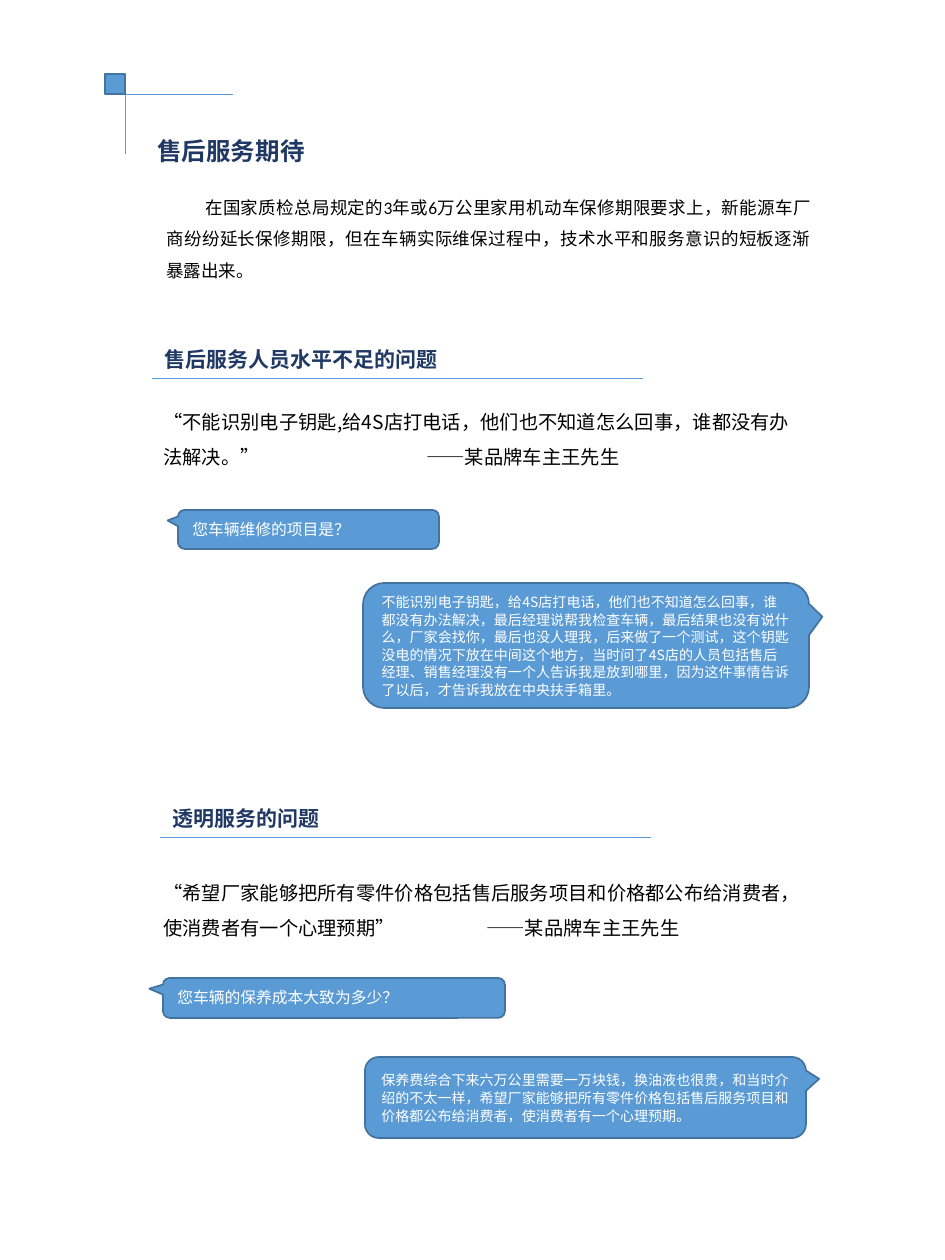
from lxml import etree
from pptx import Presentation
from pptx.dml.color import RGBColor
from pptx.enum.lang import MSO_LANGUAGE_ID
from pptx.enum.shapes import MSO_CONNECTOR, MSO_SHAPE
from pptx.enum.text import MSO_ANCHOR, MSO_AUTO_SIZE, PP_ALIGN
from pptx.oxml.ns import qn
from pptx.util import Pt

EMU_PER_PX = 914400 / 126
PAGE_WIDTH, PAGE_HEIGHT = 945, 1260

BLUE = RGBColor(0x5B, 0x9B, 0xD5)
OUTLINE = RGBColor(0x43, 0x73, 0x9E)
NAVY = RGBColor(0x20, 0x38, 0x64)
BLACK = RGBColor(0, 0, 0)
WHITE = RGBColor(0xFF, 0xFF, 0xFF)

CJK_FONT = "Noto Sans CJK SC"
BODY_FONT = "Calibri"

LEFT, JUSTIFY = PP_ALIGN.LEFT, PP_ALIGN.JUSTIFY
MIDDLE = MSO_ANCHOR.MIDDLE
GROW = MSO_AUTO_SIZE.SHAPE_TO_FIT_TEXT
STRAIGHT = MSO_CONNECTOR.STRAIGHT
RECTANGLE = MSO_SHAPE.RECTANGLE
CALLOUT = MSO_SHAPE.ROUNDED_RECTANGULAR_CALLOUT
CHINESE = MSO_LANGUAGE_ID.SIMPLIFIED_CHINESE

QUESTION_TAIL, ANSWER_TAIL = -0.54, 0.53
TAIL_HEIGHT, CORNER_ROUNDING = -0.23, 0.17


def px(*lengths):
    return [round(length * EMU_PER_PX) for length in lengths]


class Page:
    def __init__(self, slide):
        self.shapes = slide.shapes

    def line(self, x1, y1, x2, y2, shapes=None):
        rule = (shapes or self.shapes).add_connector(STRAIGHT, *px(x1, y1, x2, y2))
        rule.line.color.rgb = BLUE
        rule.line.width = Pt(0.5)
        etree.SubElement(rule._element.spPr, qn("a:effectLst"))

    def box(self, kind, area, shapes=None):
        shape = (shapes or self.shapes).add_shape(kind, *px(*area))
        shape.shadow.inherit = False
        shape.fill.solid()
        shape.fill.fore_color.rgb = BLUE
        shape.line.color.rgb = OUTLINE
        shape.line.width = Pt(1)
        return shape

    def corner_mark(self, x, y, size):
        shapes = self.shapes.add_group_shape().shapes
        self.line(x, y + size, x + 128, y + size, shapes)
        self.line(x + size, y, x + size, y + 80, shapes)
        self.box(RECTANGLE, (x, y, size, size), shapes)

    def set_text(self, frame, wording, size, color, spacing=None, bold=False,
                 face=CJK_FONT, align=LEFT):
        frame.word_wrap = True
        paragraph = frame.paragraphs[0]
        paragraph.text = wording
        paragraph.alignment = align
        paragraph.line_spacing = spacing
        font = paragraph.font
        font.name, font.size, font.bold = face, Pt(size), bold
        font.color.rgb = color
        font.language_id = CHINESE
        properties = paragraph._p.pPr
        etree.SubElement(properties.find(qn("a:defRPr")), qn("a:ea"), typeface=CJK_FONT)
        return properties

    def text(self, area, wording, size, color, **style):
        frame = self.shapes.add_textbox(*px(*area)).text_frame
        properties = self.set_text(frame, wording, size, color, **style)
        frame.auto_size = GROW
        return properties

    def body(self, area, wording, indent):
        properties = self.text(area, wording, 10, BLACK, spacing=1.5,
                               face=BODY_FONT, align=JUSTIFY)
        properties.set("marL", "0")
        properties.set("indent", str(px(indent)[0]))

    def section(self, x, y, heading):
        self.line(x, y + 38, x + 491, y + 38)
        self.text((x, y, 382, 38), heading, 12, NAVY, bold=True)

    def quote(self, area, wording, speaker, speaker_at):
        """Set the speaker at a tab stop after the quoted words."""
        properties = self.text(area, f"{wording}\t{speaker}", 11, BLACK, spacing=1.5)
        stops = etree.Element(qn("a:tabLst"))
        etree.SubElement(stops, qn("a:tab"), pos=str(px(speaker_at)[0]), algn="l")
        properties.find(qn("a:defRPr")).addprevious(stops)

    def callout(self, area, wording, size, tail):
        bubble = self.box(CALLOUT, area)
        for index, value in enumerate((tail, TAIL_HEIGHT, CORNER_ROUNDING)):
            bubble.adjustments[index] = value
        bubble.text_frame.vertical_anchor = MIDDLE
        self.set_text(bubble.text_frame, wording, size, WHITE, spacing=Pt(10))

    def question(self, area, wording):
        self.callout(area, wording, 9, QUESTION_TAIL)

    def answer(self, area, wording):
        self.callout(area, wording, 8, ANSWER_TAIL)


def main():
    deck = Presentation()
    deck.slide_width, deck.slide_height = px(PAGE_WIDTH, PAGE_HEIGHT)
    page = Page(deck.slides.add_slide(deck.slide_layouts[6]))
    speaker = "——某品牌车主王先生"

    page.corner_mark(105, 74, 20)
    page.text((145, 130, 546, 43), "售后服务期待", 14, NAVY, bold=True)
    page.body(
        (154, 180, 669, 105),
        "在国家质检总局规定的3年或6万公里家用机动车保修期限要求上，新能源车厂商纷纷延长保修期限，"
        "但在车辆实际维保过程中，技术水平和服务意识的短板逐渐暴露出来。",
        indent=39,
    )

    page.section(152, 340, "售后服务人员水平不足的问题")
    page.quote(
        (151, 393, 654, 83),
        "“不能识别电子钥匙,给4S店打电话，他们也不知道怎么回事，谁都没有办法解决。”",
        speaker, speaker_at=263,
    )
    page.question((178, 510, 261, 39), "您车辆维修的项目是？")
    page.answer(
        (363, 583, 446, 125),
        "不能识别电子钥匙，给4S店打电话，他们也不知道怎么回事，谁都没有办法解决，"
        "最后经理说帮我检查车辆，最后结果也没有说什么，厂家会找你，最后也没人理我，"
        "后来做了一个测试，这个钥匙没电的情况下放在中间这个地方，"
        "当时问了4S店的人员包括售后经理、销售经理没有一个人告诉我是放到哪里，"
        "因为这件事情告诉了以后，才告诉我放在中央扶手箱里。",
    )

    page.section(160, 799, "透明服务的问题")
    page.quote(
        (151, 864, 670, 83),
        "“希望厂家能够把所有零件价格包括售后服务项目和价格都公布给消费者，使消费者有一个心理预期”",
        speaker, speaker_at=323,
    )
    page.question((163, 978, 342, 40), "您车辆的保养成本大致为多少？")
    page.answer(
        (365, 1057, 441, 81),
        "保养费综合下来六万公里需要一万块钱，换油液也很贵，和当时介绍的不太一样，"
        "希望厂家能够把所有零件价格包括售后服务项目和价格都公布给消费者，"
        "使消费者有一个心理预期。",
    )
    deck.save("out.pptx")


if __name__ == "__main__":
    main()
